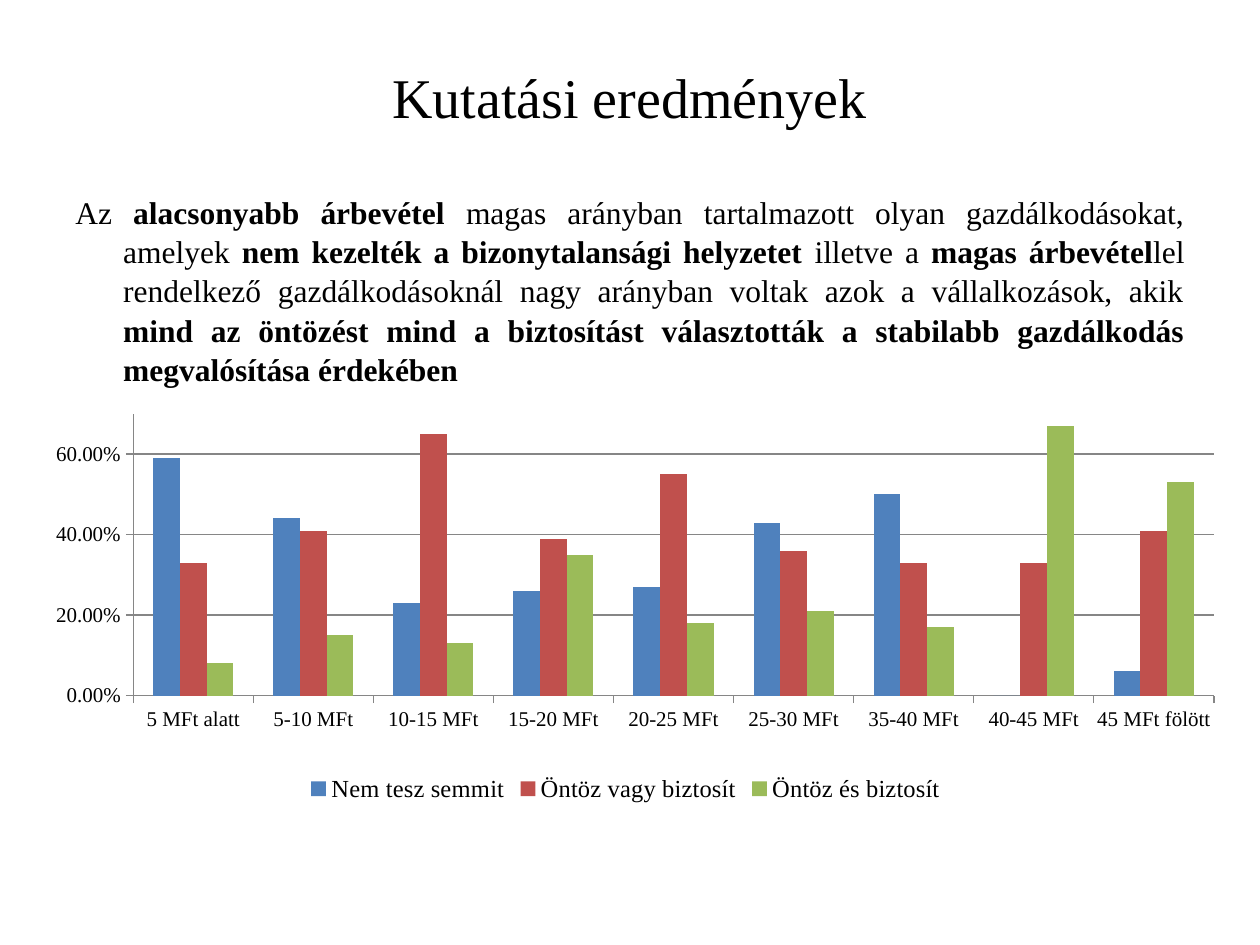
from pptx import Presentation
from pptx.chart.data import CategoryChartData
from pptx.dml.color import RGBColor
from pptx.enum.chart import XL_CHART_TYPE, XL_LEGEND_POSITION, XL_TICK_MARK
from pptx.enum.text import MSO_ANCHOR, PP_ALIGN
from pptx.oxml import parse_xml
from pptx.oxml.ns import nsdecls
from pptx.util import Inches, Pt

COLORS = {
    "text": "000000",
    "axis": "868686",
    "nothing": "4F81BD",
    "either": "C0504D",
    "both": "9BBB59",
}
FONT = "Times New Roman"

# Each span is (text, bold)
FINDING = [
    ("Az ", False),
    ("alacsonyabb árbevétel ", True),
    ("magas arányban tartalmazott olyan gazdálkodásokat, amelyek ", False),
    ("nem kezelték a bizonytalansági helyzetet ", True),
    ("illetve a ", False),
    ("magas árbevétel", True),
    ("lel rendelkező gazdálkodásoknál nagy arányban voltak azok a "
     "vállalkozások, akik ", False),
    ("mind az öntözést mind a biztosítást választották a stabilabb "
     "gazdálkodás megvalósítása érdekében", True),
]

REVENUE_BANDS = [
    "5 MFt alatt", "5-10 MFt", "10-15 MFt", "15-20 MFt", "20-25 MFt",
    "25-30 MFt", "35-40 MFt", "40-45 MFt", "45 MFt fölött",
]
# Each series is (name, color, shares)
RESPONSES = [
    ("Nem tesz semmit", "nothing",
     [0.59, 0.44, 0.23, 0.26, 0.27, 0.43, 0.5, 0, 0.06]),
    ("Öntöz vagy biztosít", "either",
     [0.33, 0.41, 0.65, 0.39, 0.55, 0.36, 0.33, 0.33, 0.41]),
    ("Öntöz és biztosít", "both",
     [0.08, 0.15, 0.13, 0.35, 0.18, 0.21, 0.17, 0.67, 0.53]),
]


class SlideBuilder:
    """Holds the style and the current slide."""

    def __init__(self, page, colors, font):
        self.page = page
        self.colors = colors
        self.font = font

    def color(self, name):
        return RGBColor.from_string(self.colors[name])

    def style_font(self, font, size, bold=False):
        font.name = self.font
        font.size = Pt(size)
        font.bold = bold
        font.color.rgb = self.color("text")

    def style_line(self, line):
        line.color.rgb = self.color("axis")
        line.width = Pt(0.75)

    def text(self, place, spans, size, align, anchor=MSO_ANCHOR.TOP,
             hanging=0, line_spacing=1.0):
        box = self.page.shapes.add_textbox(*map(Inches, place))
        frame = box.text_frame
        frame.word_wrap = True
        frame.vertical_anchor = anchor
        para = frame.paragraphs[0]
        para.alignment = align
        para.line_spacing = line_spacing
        if hanging:
            properties = para._p.get_or_add_pPr()
            properties.set("marL", str(Inches(hanging)))
            properties.set("indent", str(-Inches(hanging)))
        for words, bold in spans:
            span = para.add_run()
            span.text = words
            self.style_font(span.font, size, bold)

    def column_chart(self, place, plot_area, categories, responses):
        data = CategoryChartData(number_format="0.00%")
        data.categories = categories
        for name, _, shares in responses:
            data.add_series(name, shares)
        chart = self.page.shapes.add_chart(
            XL_CHART_TYPE.COLUMN_CLUSTERED, *map(Inches, place), data).chart
        chart.has_title = False
        self.style_font(chart.font, 10)

        # Columns
        plot = chart.plots[0]
        plot.vary_by_categories = False
        plot.gap_width = 150
        plot.overlap = 0
        for series, (_, color, _) in zip(plot.series, responses):
            series.format.fill.solid()
            series.format.fill.fore_color.rgb = self.color(color)

        # Axes
        for axis in (chart.category_axis, chart.value_axis):
            axis.major_tick_mark = XL_TICK_MARK.OUTSIDE
            self.style_font(axis.tick_labels.font, 12)
            self.style_line(axis.format.line)
        shares_axis = chart.value_axis
        shares_axis.minimum_scale = 0
        shares_axis.maximum_scale = 0.7
        shares_axis.major_unit = 0.2
        shares_axis.tick_labels.number_format = "0.00%"
        shares_axis.tick_labels.number_format_is_linked = False
        self.style_line(shares_axis.major_gridlines.format.line)

        # Legend
        chart.has_legend = True
        chart.legend.position = XL_LEGEND_POSITION.BOTTOM
        chart.legend.include_in_layout = False
        self.style_font(chart.legend.font, 14)

        # Inner plot area as fractions of the chart
        fractions = "".join(f'<c:{key} val="{value}"/>'
                            for key, value in zip("xywh", plot_area))
        layout = parse_xml(
            f'<c:layout {nsdecls("c")}><c:manualLayout>'
            '<c:layoutTarget val="inner"/>'
            '<c:xMode val="edge"/><c:yMode val="edge"/>'
            f'{fractions}</c:manualLayout></c:layout>')
        area = chart._chartSpace.chart.plotArea
        for old_layout in area.findall(layout.tag):
            area.remove(old_layout)
        area.insert(0, layout)


def main():
    deck = Presentation()
    deck.slide_width, deck.slide_height = Inches(10), Inches(7.5)
    page = deck.slides.add_slide(deck.slide_layouts[6])
    builder = SlideBuilder(page, COLORS, FONT)

    # Title and finding
    builder.text((0.5, 0.3, 9, 0.93), [("Kutatási eredmények", False)], 32,
                 PP_ALIGN.CENTER, anchor=MSO_ANCHOR.MIDDLE)
    builder.text((0.5, 1.47, 9, 2.05), FINDING, 18, PP_ALIGN.JUSTIFY,
                 hanging=0.38, line_spacing=1.04)

    # Responses by revenue band
    builder.column_chart((0.2, 3.12, 9.53, 3.29), (0.09, 0.05, 0.9, 0.68),
                         REVENUE_BANDS, RESPONSES)
    deck.save("out.pptx")


if __name__ == "__main__":
    main()
